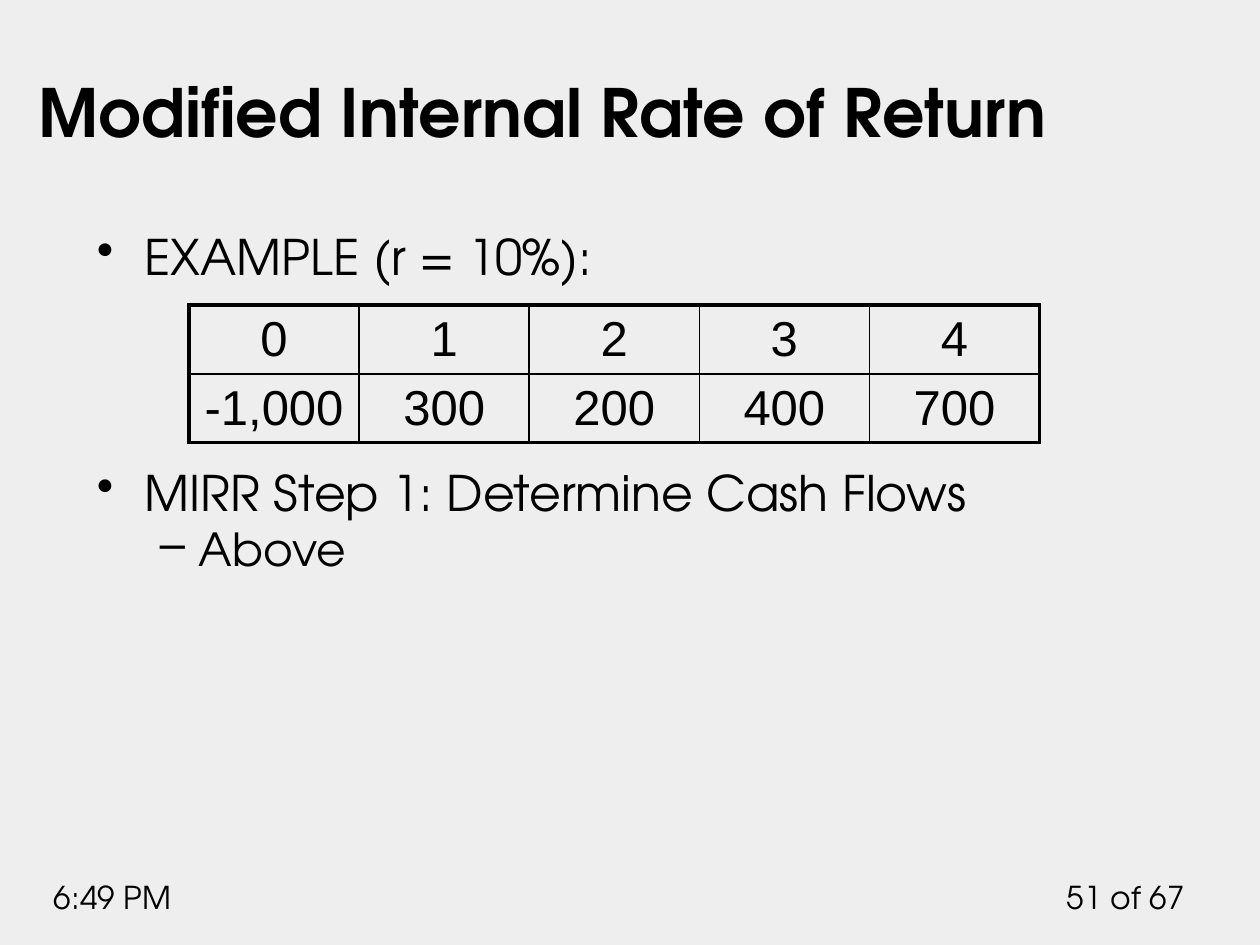
from pptx import Presentation
from pptx import util as u
from pptx.dml.color import RGBColor
from pptx.enum import text
from pptx.oxml.ns import qn
from lxml import etree

Inches, Pt = u.Inches, u.Pt
COLORS = {"background": "EEEEEE", "ink": "000000"}
HEADING_FONT, TABLE_FONT = "TeX Gyre Adventor", "Arial"


def write(para, words, **font_format):
    span = para.add_run()
    span.text = words
    for name, value in font_format.items():
        setattr(span.font, name, value)
    span.font.color.rgb = RGBColor.from_string(COLORS["ink"])


def add_box(page, left, top, width, height, anchor=text.MSO_ANCHOR.TOP):
    box = page.shapes.add_textbox(Inches(left), Inches(top), Inches(width), Inches(height))
    box.text_frame.word_wrap = True
    box.text_frame.vertical_anchor = anchor
    return box.text_frame


deck = Presentation()
deck.slide_width, deck.slide_height = Inches(10), Inches(7.5)
page = deck.slides.add_slide(deck.slide_layouts[6])
page.background.fill.solid()
page.background.fill.fore_color.rgb = RGBColor.from_string(COLORS["background"])

footers = [
    ("51 of 67", 8.33, 1.17, text.PP_ALIGN.RIGHT),
    ("6:49 PM", 0.33, 1.58, text.PP_ALIGN.LEFT),
]
for words, left, width, align in footers:
    para = add_box(page, left, 6.92, width, 0.4).paragraphs[0]
    para.alignment = align
    write(para, words, name=HEADING_FONT, size=Pt(18))

title = add_box(page, 0.21, 0.25, 8.77, 1, text.MSO_ANCHOR.BOTTOM)
write(title.paragraphs[0], "Modified Internal Rate of Return",
      name=HEADING_FONT, size=Pt(38), bold=True)

body = add_box(page, 0.67, 1.75, 8.42, 5.08)
bullets = [
    ("EXAMPLE (r = 10%):", 0, "•", 28, 0.38, -0.38, 0),
    ("MIRR Step 1: Determine Cash Flows", 0, "•", 28, 0.38, -0.38, 101),
    ("Above", 1, "–", 26, 0.81, -0.31, 0),
]
for index, (words, level, mark, size, margin, indent, before) in enumerate(bullets):
    para = body.add_paragraph() if index else body.paragraphs[0]
    para.level = level
    para.space_before = Pt(before)
    properties = para._p.get_or_add_pPr()
    properties.set("marL", str(Inches(margin)))
    properties.set("indent", str(Inches(indent)))
    etree.SubElement(properties, qn("a:buChar"), char=mark)
    write(para, words, name=HEADING_FONT, size=Pt(size))

cash_flows = [["0", "1", "2", "3", "4"], ["-1,000", "300", "200", "400", "700"]]
row_count, column_count = len(cash_flows), len(cash_flows[0])
table = page.shapes.add_table(row_count, column_count, Inches(1.5), Inches(2.42),
                              Inches(6.75), Inches(1.06)).table
table.first_row = table.horz_banding = False
for column in table.columns:
    column.width = Inches(1.35)
for row in table.rows:
    row.height = Inches(0.53)

cell_format = {
    "vertical_anchor": text.MSO_ANCHOR.MIDDLE,
    "margin_top": Inches(0.04),
    "margin_bottom": Inches(0.04),
}
for r, values in enumerate(cash_flows):
    for c, value in enumerate(values):
        cell = table.cell(r, c)
        for name, setting in cell_format.items():
            setattr(cell, name, setting)
        para = cell.text_frame.paragraphs[0]
        para.alignment = text.PP_ALIGN.CENTER
        write(para, value, name=TABLE_FONT, size=Pt(28))
        outer_edges = {
            "lnL": c == 0,
            "lnR": c == column_count - 1,
            "lnT": r == 0,
            "lnB": r == row_count - 1,
        }
        properties = cell._tc.get_or_add_tcPr()
        for edge, is_outer in outer_edges.items():
            line = etree.SubElement(properties, qn(f"a:{edge}"),
                                    w=str(Pt(2.25 if is_outer else 1)))
            fill = etree.SubElement(line, qn("a:solidFill"))
            etree.SubElement(fill, qn("a:srgbClr"), val=COLORS["ink"])
        cell.fill.background()

deck.save("out.pptx")
